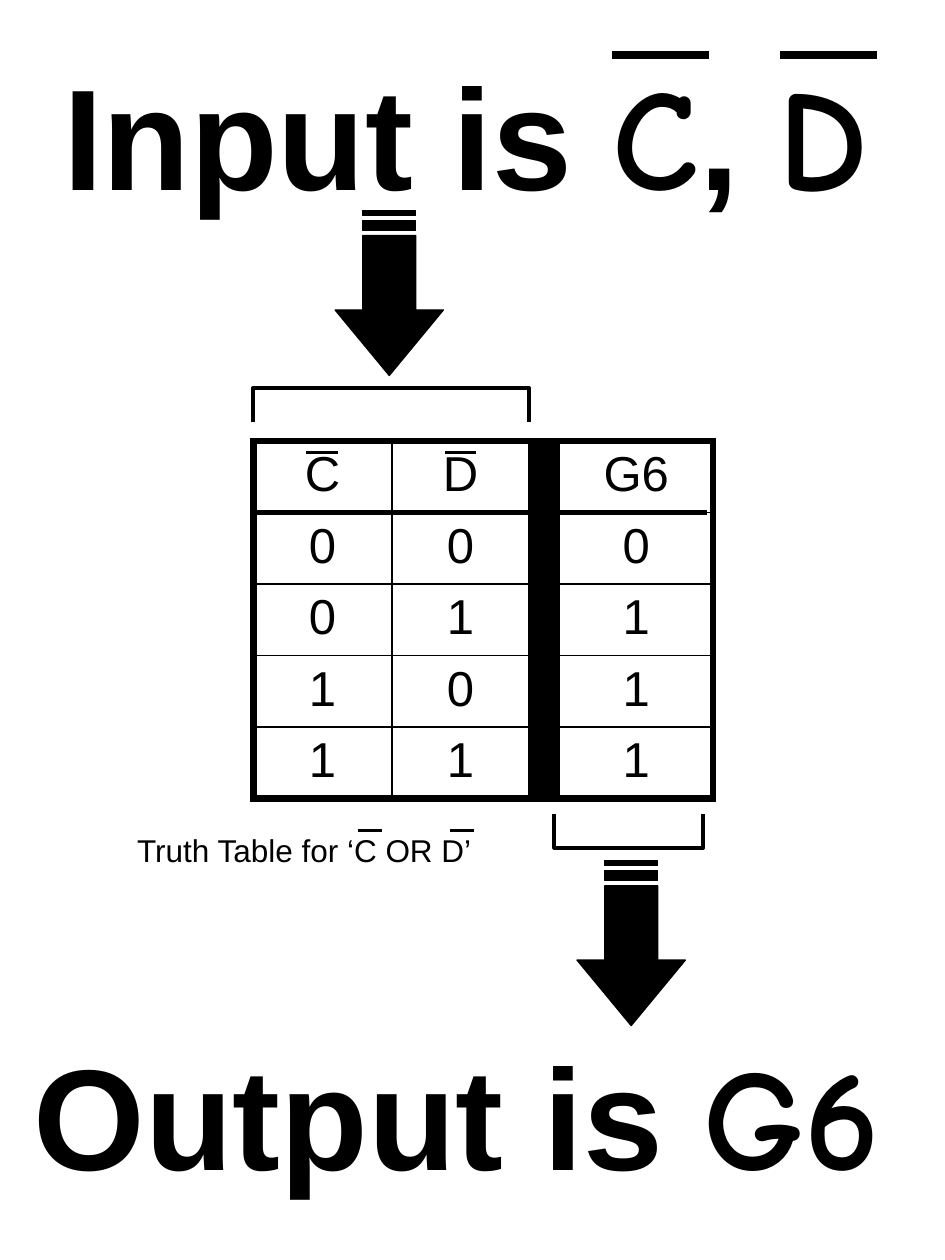
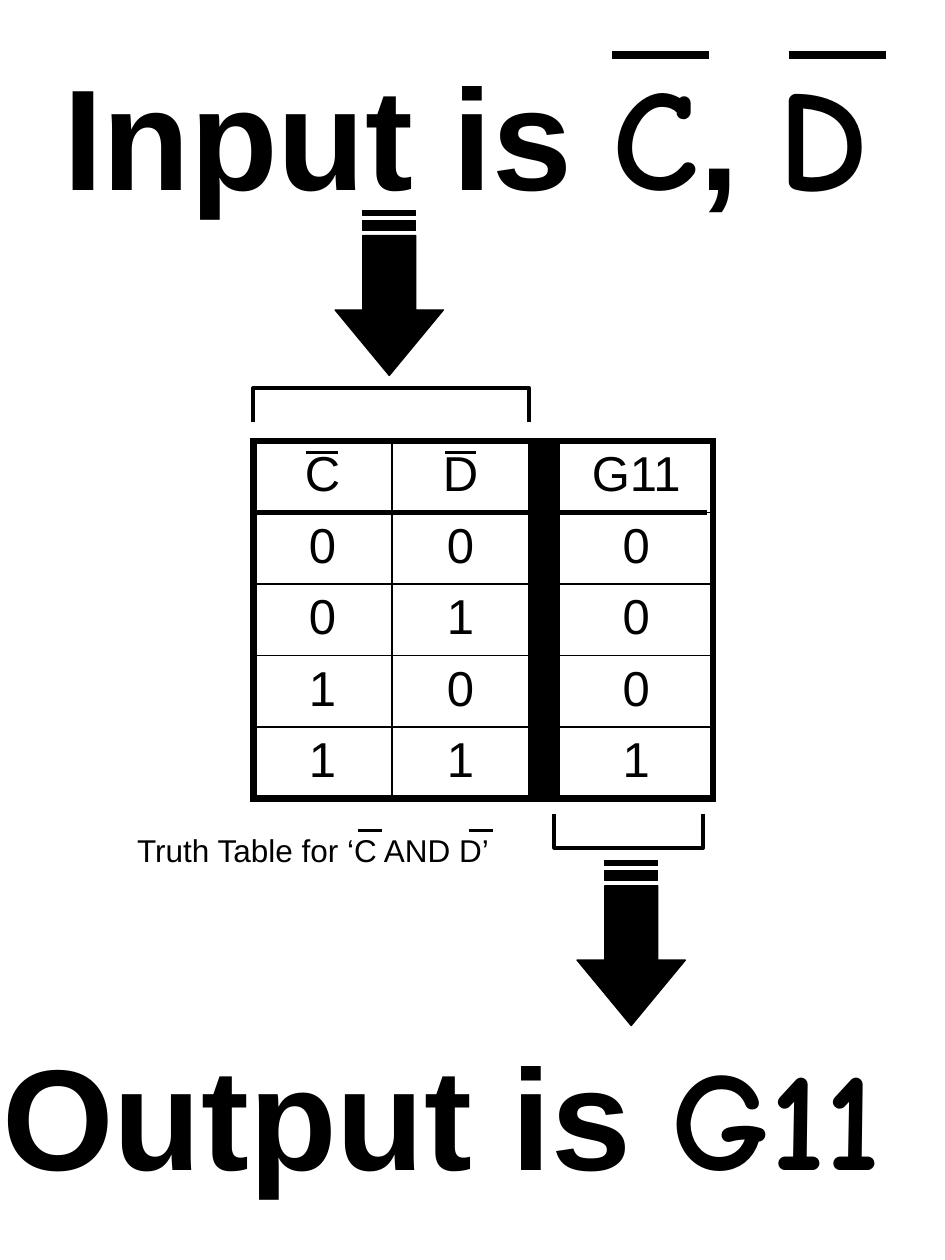
from itertools import accumulate
from lxml.etree import SubElement
from pptx import Presentation
from pptx.dml.color import RGBColor
from pptx.enum.shapes import MSO_CONNECTOR
from pptx.enum.text import MSO_ANCHOR, MSO_AUTO_SIZE, PP_ALIGN
from pptx.oxml import parse_xml
from pptx.oxml.ns import nsdecls, qn
from pptx.util import Inches, Pt

rgb = RGBColor.from_string
INK = "000000"
SANS, HAND = "Arial", "Comic Neue"
W, H = 7.5, 10
TABLE_X, TABLE_Y = 2.01, 3.5
COLS = [1.1, 1.09, 0.23, 1.22]
ROWS = 5
ROW_H = 2.83 / ROWS
EDGES = list(accumulate(COLS, initial=TABLE_X))
BIG = dict(size=Pt(82), bold=True)
SMALL = dict(size=Pt(18), bold=False)
BODY = dict(size=Pt(28), bold=False)
FRAME = dict(word_wrap=False, auto_size=MSO_AUTO_SIZE.SHAPE_TO_FIT_TEXT,
             vertical_anchor=MSO_ANCHOR.TOP)
STRIPES = [(0, 0.04), (0.08, 0.16)]
INPUTS = [("0", "0"), ("0", "1"), ("1", "0"), ("1", "1")]


def write(tf, runs, fmt, align=PP_ALIGN.LEFT):
    p = tf.paragraphs[0]
    p.alignment = align
    for text, font in runs:
        r = p.add_run()
        r.text = text
        for key, value in dict(fmt, name=font).items():
            setattr(r.font, key, value)
        r.font.color.rgb = rgb(INK)


def outline(s, contours, width, closed):
    fb = None
    for contour in contours:
        pts = [(Inches(x), Inches(y)) for x, y in contour]
        if fb is None:
            fb = s.shapes.build_freeform(*pts[0])
        else:
            fb.move_to(*pts[0])
        fb.add_line_segments(pts[1:], close=closed)
    sp = fb.convert_to_shape()
    sp.shadow.inherit = False
    if closed:
        sp.fill.solid()
        sp.fill.fore_color.rgb = rgb(INK)
    else:
        sp.fill.background()
    sp.line.color.rgb = rgb(INK)
    sp.line.width = Pt(width)


prs = Presentation()
prs.slide_width, prs.slide_height = Inches(W), Inches(H)

slides = [
    dict(gate="G6", op="OR", outs="0111", out_x=0.17, out_w=6.98, out_size=82,
         note_w=2.9, title_bar=6.19, note_bar=3.57),
    dict(gate="G11", op="AND", outs="0001", out_x=-0.08, out_w=7.63, out_size=80,
         note_w=3.05, title_bar=6.26, note_bar=3.72),
]

for d in slides:
    s = prs.slides.add_slide(prs.slide_layouts[5])

    title = s.shapes.title
    output = s.shapes.add_textbox(0, 0, 0, 0)
    note = s.shapes.add_textbox(0, 0, 0, 0)
    texts = [
        (title, (0.4, 0.32, 6.72, 1.47), BIG,
         [("Input is ", SANS), ("C", HAND), (", ", SANS), ("D", HAND)]),
        (output, (d["out_x"], 8.1, d["out_w"], 1.47), BIG, [("Output is ", SANS)]),
        (note, (0.99, 6.55, d["note_w"], 0.4), SMALL,
         [(f"Truth Table for ‘C {d['op']} D’", SANS)]),
    ]
    for sp, box, fmt, runs in texts:
        sp.left, sp.top, sp.width, sp.height = map(Inches, box)
        for key, value in FRAME.items():
            setattr(sp.text_frame, key, value)
        write(sp.text_frame, runs, fmt)
    write(output.text_frame, [(d["gate"], HAND)], dict(BIG, size=Pt(d["out_size"])))

    frame = s.shapes.add_table(ROWS, len(COLS), Inches(TABLE_X), Inches(TABLE_Y),
                               Inches(sum(COLS)), Inches(ROW_H * ROWS))
    tbl = frame.table
    tbl.first_row = tbl.horz_banding = False
    for col, w in zip(tbl.columns, COLS):
        col.width = Inches(w)
    data = [("C", "D", "", d["gate"])]
    data += [(c, e, "", out) for (c, e), out in zip(INPUTS, d["outs"])]
    for i, values in enumerate(data):
        tbl.rows[i].height = Inches(ROW_H)
        for j, value in enumerate(values):
            cell = tbl.cell(i, j)
            if value:
                cell.fill.background()
                write(cell.text_frame, [(value, SANS)], BODY, PP_ALIGN.CENTER)
            else:
                cell.fill.solid()
                cell.fill.fore_color.rgb = rgb(INK)
            outer = dict(L=j == 0, R=j == len(COLS) - 1, T=i == 0, B=i == ROWS - 1)
            for k, (side, thick) in enumerate(outer.items()):
                cell._tc.get_or_add_tcPr().insert(k, parse_xml(
                    f'<a:ln{side} {nsdecls("a")} w="{Pt(4.5 if thick else 1)}">'
                    f'<a:solidFill><a:srgbClr val="{INK}"/></a:solidFill></a:ln{side}>'))

    bars = [
        (2.43, 3.59, 0.25, 1.5), (3.53, 3.59, 0.25, 1.5),
        (2.84, 6.59, 0.19, 1.5), (d["note_bar"], 6.59, 0.19, 1.5),
        (4.86, 0.44, 0.77, 4.5), (d["title_bar"], 0.44, 0.77, 4.5),
        (TABLE_X, TABLE_Y + ROW_H, 3.6, 3),
    ]
    for x, y, length, width in bars:
        ln = s.shapes.add_connector(MSO_CONNECTOR.STRAIGHT, Inches(x), Inches(y),
                                    Inches(x + length), Inches(y))
        ln.line.color.rgb = rgb(INK)
        ln.line.width = Pt(width)
        SubElement(ln._element.spPr, qn("a:effectLst"))

    for mid, top in [(3.09, 1.67), (5.01, 6.83)]:
        l, r = mid - 0.21, mid + 0.21
        neck, tip = top + 0.79, top + 1.31
        arrow = [(r, neck), (r, top + 0.2), (l, top + 0.2), (l, neck),
                 (mid - 0.43, neck), (mid, tip), (mid + 0.43, neck)]
        stripes = [[(r, top + a), (l, top + a), (l, top + b), (r, top + b)]
                   for a, b in STRIPES]
        outline(s, [arrow] + stripes, 0.75, True)

    for l, r, ends, bar in [(EDGES[0], EDGES[2], 3.35, 3.08), (4.4, 5.58, 6.46, 6.73)]:
        outline(s, [[(l, ends), (l, bar), (r, bar), (r, ends)]], 2.25, False)

prs.save("out.pptx")
